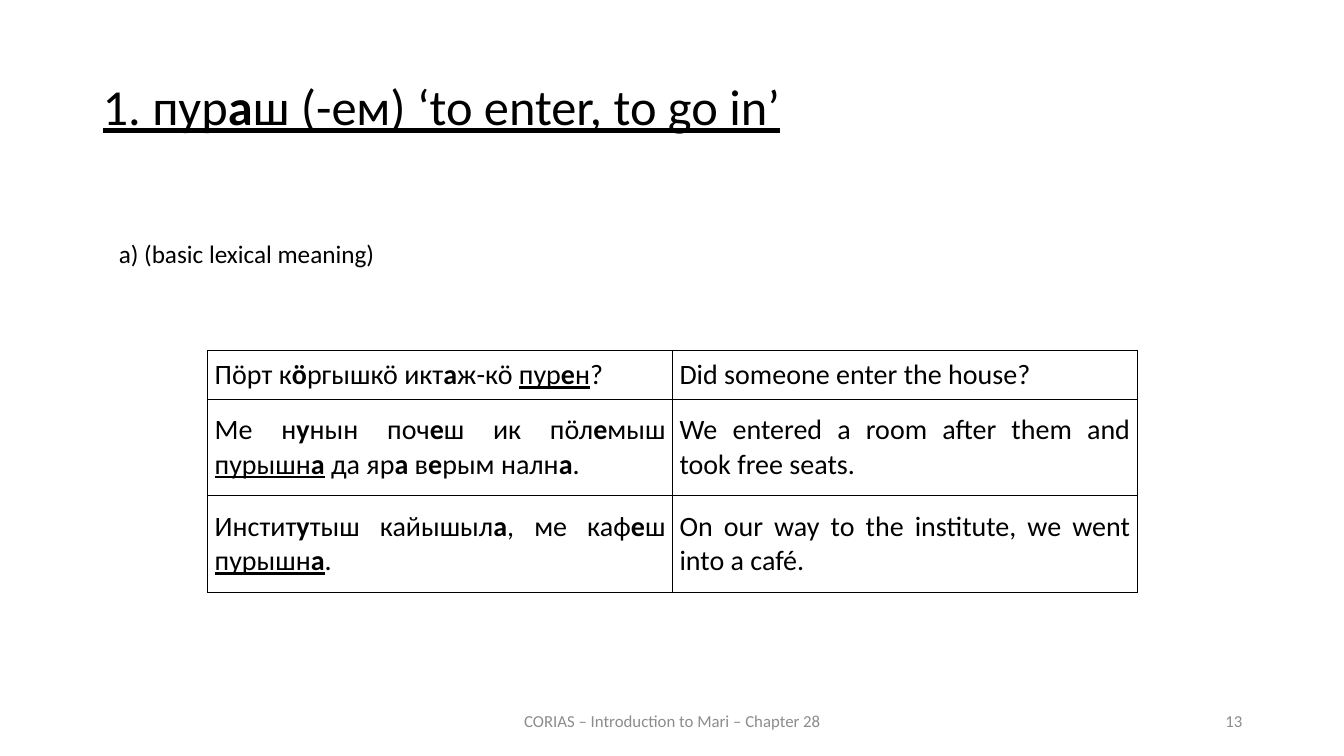
from dataclasses import dataclass

from lxml import etree
from pptx import Presentation
from pptx.dml.color import RGBColor
from pptx.enum.text import MSO_ANCHOR, PP_ALIGN
from pptx.oxml.ns import qn
from pptx.slide import Slide
from pptx.table import _Cell
from pptx.text.text import TextFrame
from pptx.util import Inches, Pt

LEFT, CENTER, RIGHT, JUSTIFY = PP_ALIGN.LEFT, PP_ALIGN.CENTER, PP_ALIGN.RIGHT, PP_ALIGN.JUSTIFY
TOP, MIDDLE = MSO_ANCHOR.TOP, MSO_ANCHOR.MIDDLE


@dataclass(frozen=True)
class Theme:
    """Colours, font and type sizes of the slide."""

    font: str = "Calibri"
    ink: str = "000000"
    muted: str = "8C8C8C"
    title: int = 36
    example: int = 20
    sense: int = 18
    footer: int = 12
    border: int = 1


@dataclass(frozen=True)
class Label:
    """A free-standing line of marked-up text."""

    text: str
    left: float
    top: float
    width: float
    height: float
    size: int
    color: str
    align: PP_ALIGN = LEFT
    anchor: MSO_ANCHOR = TOP
    line_spacing: float = 1.0
    space_before: int = 0


@dataclass(frozen=True)
class Example:
    """A Mari sentence with its translation and row height."""

    mari: str
    english: str
    height: float


THEME = Theme()
LABELS = [
    Label("_1. пур*а*ш (-ем) ‘to enter, to go in’_", 0.92, 0.76, 11.5, 0.83,
          THEME.title, THEME.ink, JUSTIFY, line_spacing=0.9, space_before=12),
    Label("a) (basic lexical meaning)", 1.08, 2.32, 6.67, 0.4, THEME.sense, THEME.ink),
    Label("CORIAS – Introduction to Mari – Chapter 28", 4.42, 6.95, 4.5, 0.4,
          THEME.footer, THEME.muted, CENTER, MIDDLE),
    Label("13", 9.42, 6.95, 3, 0.4, THEME.footer, THEME.muted, RIGHT, MIDDLE),
]
EXAMPLES = [
    Example("Пӧрт к*ӧ*ргышкӧ икт*а*ж-кӧ _пур*е*н_?", "Did someone enter the house?", 0.48),
    Example("Ме н*у*нын поч*е*ш ик пӧл*е*мыш _пурышн*а*_ да яр*а* в*е*рым налн*а*.",
            "We entered a room after them and took free seats.", 0.96),
    Example("Инстит*у*тыш кайышыл*а*, ме каф*е*ш _пурышн*а*_.",
            "On our way to the institute, we went into a café.", 0.96),
]
TABLE_LEFT, TABLE_TOP, COLUMN_WIDTH, CELL_INSET = 2.06, 3.48, 4.61, 0.07


def write(frame: TextFrame, text: str, *, size: int, color: str, align: PP_ALIGN,
          line_spacing: float = 1.0, space_before: int = 0) -> None:
    """Write text in which *stars* mark bold and _underscores_ mark underline."""
    paragraph = frame.paragraphs[0]
    paragraph.alignment = align
    paragraph.line_spacing = line_spacing
    paragraph.space_before = Pt(space_before)
    for underline_index, stretch in enumerate(text.split("_")):
        for bold_index, piece in enumerate(stretch.split("*")):
            if not piece:
                continue
            run = paragraph.add_run()
            run.text = piece
            run.font.name = THEME.font
            run.font.size = Pt(size)
            run.font.color.rgb = RGBColor.from_string(color)
            run.font.bold = bold_index % 2 == 1
            run.font.underline = underline_index % 2 == 1


def add_label(slide: Slide, label: Label) -> None:
    """Place one label on the slide."""
    frame = slide.shapes.add_textbox(Inches(label.left), Inches(label.top),
                                     Inches(label.width), Inches(label.height)).text_frame
    frame.word_wrap = True
    frame.vertical_anchor = label.anchor
    write(frame, label.text, size=label.size, color=label.color, align=label.align,
          line_spacing=label.line_spacing, space_before=label.space_before)


def outline(cell: _Cell) -> None:
    """Draw a solid line on all four sides of a cell."""
    properties = cell._tc.get_or_add_tcPr()
    for position, side in enumerate(("a:lnL", "a:lnR", "a:lnT", "a:lnB")):
        line = etree.Element(qn(side), w=str(Pt(THEME.border)))
        fill = etree.SubElement(line, qn("a:solidFill"))
        etree.SubElement(fill, qn("a:srgbClr"), val=THEME.ink)
        properties.insert(position, line)


def add_examples(slide: Slide, examples: list[Example]) -> None:
    """Set the sentences beside their translations in a ruled table."""
    total_height = sum(example.height for example in examples)
    table = slide.shapes.add_table(len(examples), 2, Inches(TABLE_LEFT), Inches(TABLE_TOP),
                                   Inches(2 * COLUMN_WIDTH), Inches(total_height)).table
    table.first_row = table.horz_banding = False
    for row, example in zip(table.rows, examples):
        row.height = Inches(example.height)
        for cell, sentence in zip(row.cells, (example.mari, example.english)):
            cell.fill.background()
            cell.vertical_anchor = MIDDLE
            cell.margin_left = cell.margin_right = Inches(CELL_INSET)
            cell.margin_top = cell.margin_bottom = Inches(0)
            write(cell.text_frame, sentence, size=THEME.example, color=THEME.ink, align=JUSTIFY)
            outline(cell)


def main() -> None:
    """Build and save the slide."""
    presentation = Presentation()
    presentation.slide_width, presentation.slide_height = Inches(13.33), Inches(7.5)
    slide = presentation.slides.add_slide(presentation.slide_layouts[6])
    for label in LABELS:
        add_label(slide, label)
    add_examples(slide, EXAMPLES)
    presentation.save("out.pptx")


if __name__ == "__main__":
    main()
